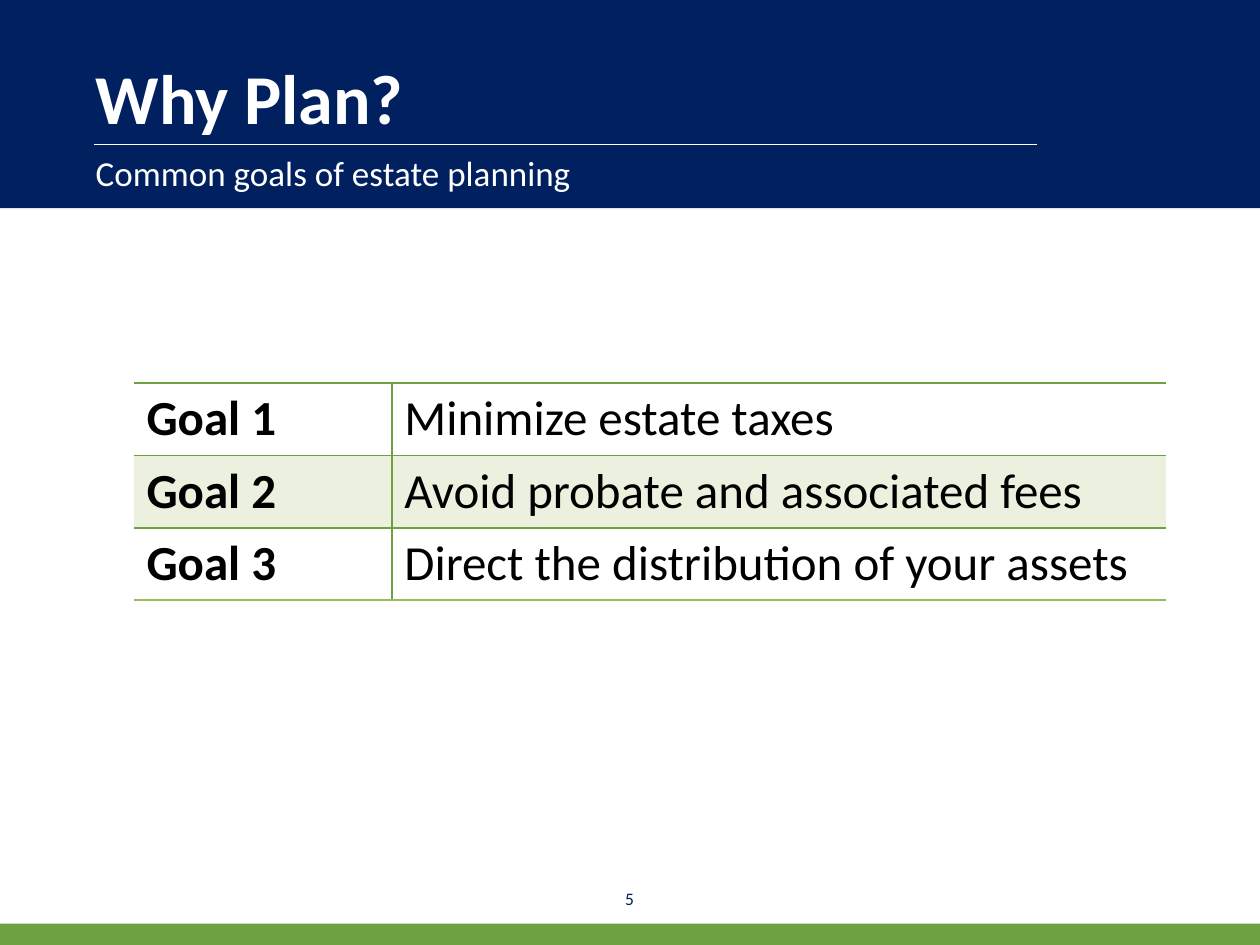
"""Build the slide on the common goals of estate planning."""
from lxml import etree
from pptx import Presentation
from pptx.dml.color import RGBColor
from pptx.enum.shapes import MSO_CONNECTOR, MSO_SHAPE
from pptx.enum.text import MSO_ANCHOR, PP_ALIGN
from pptx.oxml.ns import qn
from pptx.util import Cm, Pt

RECT = MSO_SHAPE.RECTANGLE
LINE = MSO_CONNECTOR.STRAIGHT
TOP, MIDDLE, BOTTOM = MSO_ANCHOR.TOP, MSO_ANCHOR.MIDDLE, MSO_ANCHOR.BOTTOM
LEFT, CENTER = PP_ALIGN.LEFT, PP_ALIGN.CENTER

NAVY = RGBColor(0x00, 0x20, 0x60)
GREEN = RGBColor(0x6D, 0xA1, 0x41)
OLIVE = RGBColor(0x9B, 0xBB, 0x59)
PALE = RGBColor(0xEB, 0xF1, 0xDE)
WHITE = RGBColor(0xFF, 0xFF, 0xFF)
BLACK = RGBColor(0x00, 0x00, 0x00)

WIDTH, HEIGHT = 25.4, 19.05
GOALS = [
    "Minimize estate taxes",
    "Avoid probate and associated fees",
    "Direct the distribution of your assets",
]


class Deck:
    def __init__(self, font):
        self.font = font
        self.prs = Presentation()
        self.prs.slide_width, self.prs.slide_height = Cm(WIDTH), Cm(HEIGHT)
        self.slide = self.prs.slides.add_slide(self.prs.slide_layouts[6])

    def band(self, top, height, color):
        shape = self.slide.shapes.add_shape(RECT, 0, Cm(top), Cm(WIDTH), Cm(height))
        shape.shadow.inherit = False
        shape.fill.solid()
        shape.fill.fore_color.rgb = color
        shape.line.fill.background()

    def rule(self, left, right, top, color):
        line = self.slide.shapes.add_connector(LINE, Cm(left), Cm(top), Cm(right), Cm(top))
        line.line.color.rgb = color
        line.line.width = Pt(0.75)
        etree.SubElement(line._element.spPr, qn("a:effectLst"))

    def style(self, para, text, size, color, bold=False):
        para.text = text
        font = para.font
        font.name, font.size, font.bold = self.font, Pt(size), bold
        font.color.rgb = color

    def text(self, box, text, size, color, bold=False, anchor=TOP, align=LEFT):
        frame = self.slide.shapes.add_textbox(*map(Cm, box)).text_frame
        frame.word_wrap = True
        frame.vertical_anchor = anchor
        para = frame.paragraphs[0]
        para.alignment = align
        self.style(para, text, size, color, bold)

    def border(self, cell, edges):
        props = cell._tc.get_or_add_tcPr()
        for side in "LRTB":
            line = etree.SubElement(props, qn("a:ln" + side), w=str(Pt(1)))
            if side in edges:
                fill = etree.SubElement(line, qn("a:solidFill"))
                etree.SubElement(fill, qn("a:srgbClr"), val=str(edges[side]))
            else:
                etree.SubElement(line, qn("a:noFill"))

    def table(self, left, top, cols, height, rows):
        frame = self.slide.shapes.add_table(
            len(rows), len(cols), Cm(left), Cm(top), Cm(sum(cols)), Cm(height * len(rows)))
        table = frame.table
        table.first_row = table.horz_banding = False
        for col, width in zip(table.columns, cols):
            col.width = Cm(width)
        last = len(rows) - 1
        for i, row in enumerate(rows):
            table.rows[i].height = Cm(height)
            for j, text in enumerate(row):
                cell = table.cell(i, j)
                self.style(cell.text_frame.paragraphs[0], text, 28, BLACK, j == 0)
                edges = {"T": GREEN, "B": OLIVE if i == last else GREEN}
                edges["L" if j else "R"] = GREEN
                self.border(cell, edges)
                if i % 2:
                    cell.fill.solid()
                    cell.fill.fore_color.rgb = PALE
                else:
                    cell.fill.background()


def main():
    deck = Deck("Calibri")
    deck.band(0, 4.2, NAVY)
    deck.band(18.62, 0.43, GREEN)
    deck.rule(1.9, 20.9, 2.91, WHITE)
    deck.text((1.68, 0.36, 22, 2.56), "Why Plan?", 40, WHITE, True, BOTTOM)
    deck.text((1.68, 2.92, 22, 2), "Common goals of estate planning", 20, WHITE)
    deck.text((12.22, 17.6, 0.94, 1.02), "5", 10, NAVY, anchor=MIDDLE, align=CENTER)
    rows = [(f"Goal {n}", goal) for n, goal in enumerate(GOALS, 1)]
    deck.table(2.7, 7.72, (5.2, 15.6), 1.46, rows)
    deck.prs.save("out.pptx")


if __name__ == "__main__":
    main()
